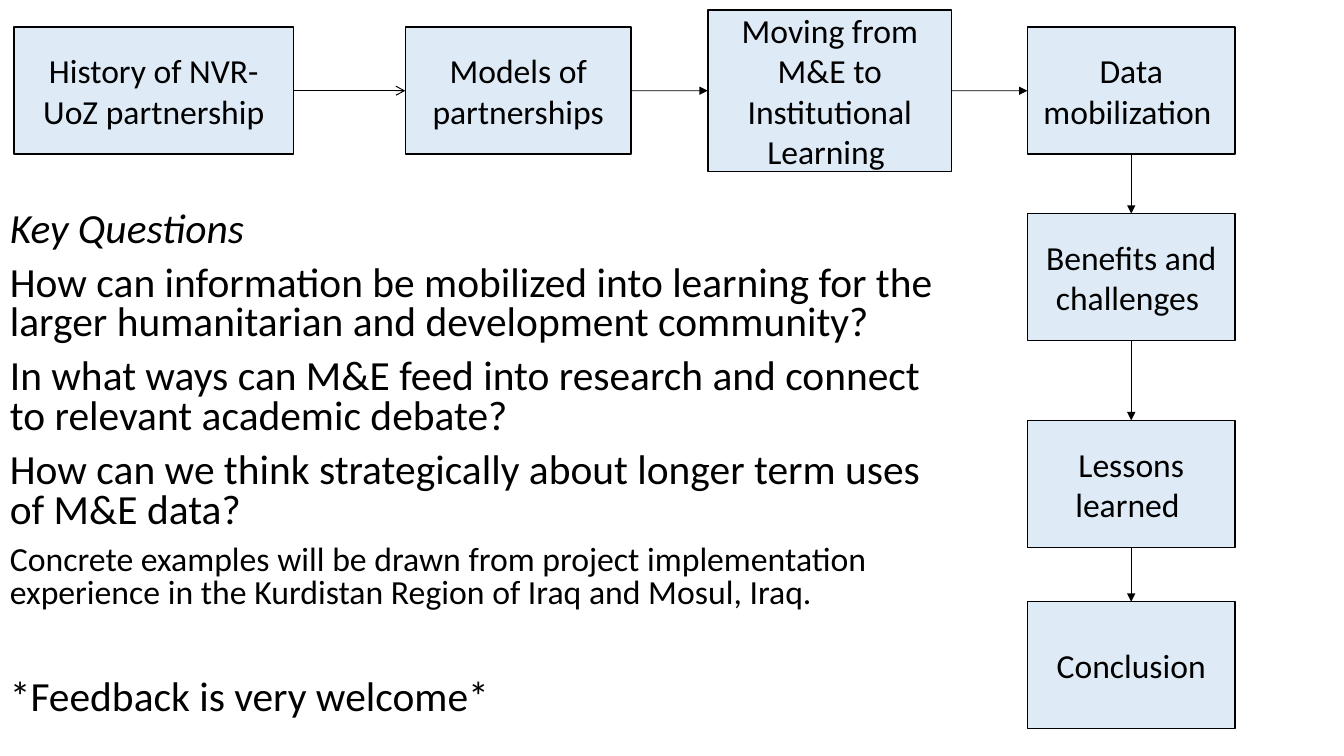
from lxml import etree
from pptx import Presentation
from pptx.dml.color import RGBColor
from pptx.enum import shapes, text
from pptx.oxml import ns
from pptx.util import Inches, Pt

BLACK = RGBColor(0x00, 0x00, 0x00)
PALE_BLUE = RGBColor(0xDE, 0xEB, 0xF7)
FONT = "Calibri"

# Steps along the top: label, left, width, height
ROW_CENTRE = 0.9
ROW_STEPS = [
    ("History of NVR-UoZ partnership", 0.14, 2.77, 1.26),
    ("Models of partnerships", 4.02, 2.24, 1.26),
    ("Moving from M&E to Institutional Learning ", 7.02, 2.42, 1.6),
    ("Data mobilization ", 10.19, 2.06, 1.26),
]
# Steps down the right side: label, top
COLUMN_LEFT, COLUMN_WIDTH, COLUMN_HEIGHT = 10.19, 2.06, 1.26
COLUMN_STEPS = [
    ("Benefits and challenges ", 2.12),
    ("Lessons learned ", 4.17),
    ("Conclusion", 5.97),
]
# Key questions: text, size, italic, space before
QUESTIONS = [
    ("Key Questions", 29.6, True, 10),
    ("How can information be mobilized into learning for the larger "
     "humanitarian and development community?", 29.6, False, 10),
    ("In what ways can M&E feed into research and connect to relevant "
     "academic debate?", 29.6, False, 10),
    ("How can we think strategically about longer term uses of M&E data?",
     29.6, False, 10),
    ("Concrete examples will be drawn from project implementation experience "
     "in the Kurdistan Region of Iraq and Mosul, Iraq.", 24.1, False, 10),
    ("*Feedback is very welcome*", 29.6, False, 49),
]


def write(para, words, size, italic=False):
    span = para.add_run()
    span.text = words
    span.font.color.rgb = BLACK
    for name, value in {"name": FONT, "size": Pt(size), "italic": italic}.items():
        setattr(span.font, name, value)


def add_step(page, label, left, top, width, height):
    box = page.shapes.add_shape(shapes.MSO_SHAPE.RECTANGLE, Inches(left),
                                Inches(top), Inches(width), Inches(height))
    box.shadow.inherit = False
    box.fill.solid()
    box.fill.fore_color.rgb = PALE_BLUE
    box.line.color.rgb = BLACK
    box.line.width = Pt(1)
    frame = box.text_frame
    frame.word_wrap = True
    frame.vertical_anchor = text.MSO_ANCHOR.MIDDLE
    para = frame.paragraphs[0]
    para.alignment = text.PP_ALIGN.CENTER
    write(para, label, 24)
    return box


def add_arrow(page, start, end, sites, width, head):
    arrow = page.shapes.add_connector(shapes.MSO_CONNECTOR.STRAIGHT, 0, 0, 0, 0)
    arrow.begin_connect(start, sites[0])
    arrow.end_connect(end, sites[1])
    arrow.line.color.rgb = BLACK
    arrow.line.width = Pt(width)
    etree.SubElement(arrow.line._get_or_add_ln(), ns.qn("a:tailEnd"), type=head)
    etree.SubElement(arrow._element.spPr, ns.qn("a:effectLst"))


def main():
    deck = Presentation()
    deck.slide_width, deck.slide_height = Inches(13.33), Inches(7.5)
    page = deck.slides.add_slide(deck.slide_layouts[6])

    # Step boxes, in reading order
    steps = [add_step(page, label, left, ROW_CENTRE - height / 2, width, height)
             for label, left, width, height in ROW_STEPS]
    steps += [add_step(page, label, COLUMN_LEFT, top, COLUMN_WIDTH, COLUMN_HEIGHT)
              for label, top in COLUMN_STEPS]

    # Arrows: right side to left side in the row, bottom to top in the column
    for index, (start, end) in enumerate(zip(steps, steps[1:])):
        sites = (3, 1) if index < len(ROW_STEPS) - 1 else (2, 0)
        width, head = (0.75, "arrow") if index == 0 else (0.5, "triangle")
        add_arrow(page, start, end, sites, width, head)

    # Key questions
    frame = page.shapes.add_textbox(Inches(0), Inches(2.05), Inches(9.5),
                                    Inches(5.5)).text_frame
    frame.word_wrap = True
    for index, (words, size, italic, gap) in enumerate(QUESTIONS):
        para = frame.add_paragraph() if index else frame.paragraphs[0]
        para.line_spacing = 0.8
        para.space_before = Pt(gap)
        write(para, words, size, italic)

    deck.save("out.pptx")


if __name__ == "__main__":
    main()
